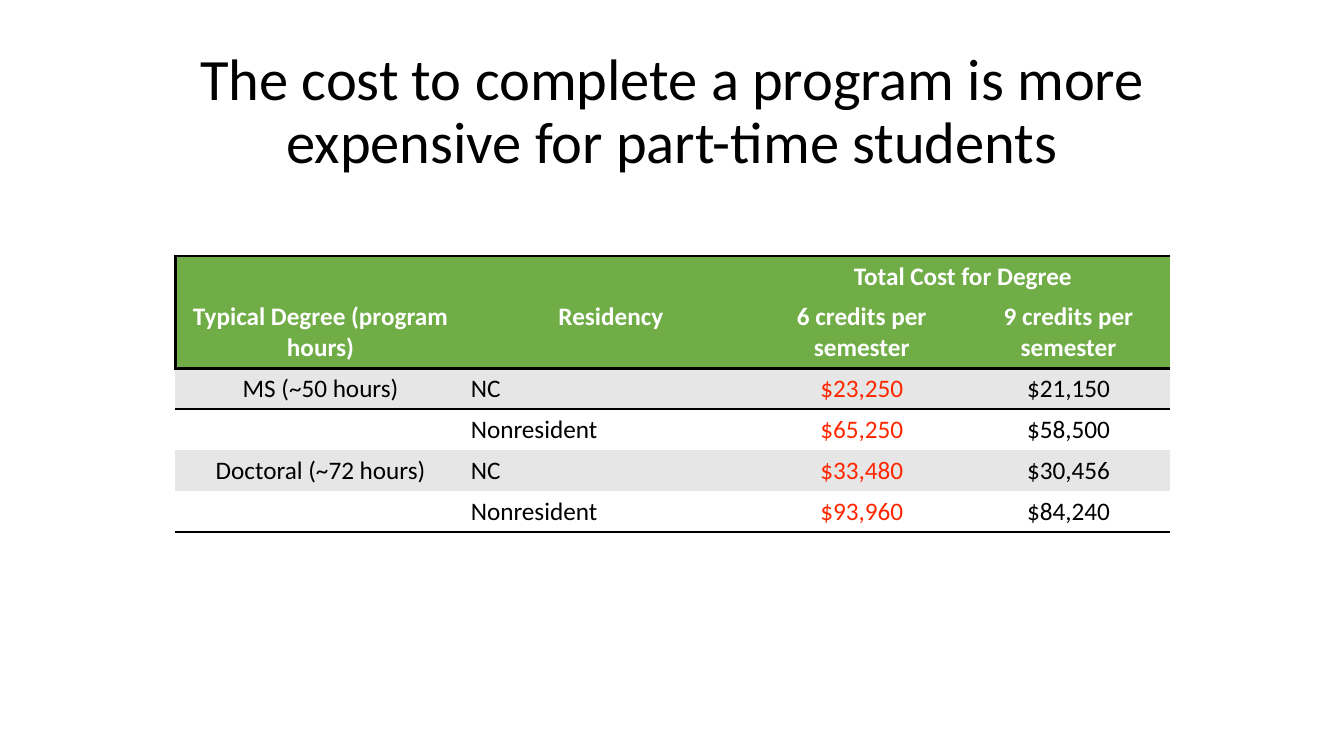
from lxml import etree
from pptx import Presentation
from pptx.dml.color import RGBColor
from pptx.enum.text import MSO_ANCHOR, PP_ALIGN
from pptx.oxml.ns import qn
from pptx.util import Pt

CENTER, LEFT = PP_ALIGN.CENTER, PP_ALIGN.LEFT
MIDDLE = MSO_ANCHOR.MIDDLE
HEX = {"ink": "000000", "head": "70AD47", "band": "E6E6E6",
       "white": "FFFFFF", "red": "FF2600"}
FONT = "Calibri"
INSET = Pt(3.6)
TITLE = "The cost to complete a program is more expensive for part-time students"
COSTS = [
    ["", "", "Total Cost for Degree", ""],
    ["Typical Degree (program hours)", "Residency",
     "6 credits per semester", "9 credits per semester"],
    ["MS (~50 hours)", "NC", "$23,250", "$21,150"],
    ["", "Nonresident", "$65,250", "$58,500"],
    ["Doctoral (~72 hours)", "NC", "$33,480", "$30,456"],
    ["", "Nonresident", "$93,960", "$84,240"],
]
WIDTHS = [207.4, 207.4, 151, 144.4]
HEIGHTS = [29.2, 51.1, 29.2, 29.2, 29.2, 29.2]
RULES = {0: 2, 2: 2, 3: 1.5, 6: 2}
HEADS = 2


def color(name):
    return RGBColor.from_string(HEX[name])


def apply(item, values):
    for name, value in values.items():
        setattr(item, name, value)


def write(para, text, size, ink, bold=False, align=CENTER):
    para.alignment = align
    run = para.add_run()
    run.text = text
    apply(run.font, {"name": FONT, "size": Pt(size), "bold": bold})
    run.font.color.rgb = color(ink)


def add_title(slide):
    box = slide.shapes.add_textbox(Pt(66), Pt(28.8), Pt(828), Pt(104.4))
    frame = box.text_frame
    apply(frame, {"word_wrap": True, "vertical_anchor": MIDDLE,
                  "margin_left": INSET, "margin_right": INSET,
                  "margin_top": INSET, "margin_bottom": INSET})
    para = frame.paragraphs[0]
    para.line_spacing = 0.9
    write(para, TITLE, 41.8, "ink")


def add_edge(cell, side, width):
    edge = etree.SubElement(cell._tc.get_or_add_tcPr(), qn("a:ln" + side))
    if not width:
        etree.SubElement(edge, qn("a:noFill"))
        return
    edge.set("w", str(Pt(width)))
    fill = etree.SubElement(edge, qn("a:solidFill"))
    etree.SubElement(fill, qn("a:srgbClr"), val=HEX["ink"])


def style_cell(cell, row, col, text):
    head = row < HEADS
    apply(cell, {"margin_left": INSET, "margin_right": INSET,
                 "margin_top": INSET, "margin_bottom": INSET})
    edges = {"L": 2 if head and col == 0 else 0, "R": 0,
             "T": RULES.get(row), "B": RULES.get(row + 1)}
    for side, width in edges.items():
        add_edge(cell, side, width)
    cell.fill.solid()
    shade = "head" if head else ("white" if row % 2 else "band")
    cell.fill.fore_color.rgb = color(shade)
    if text:
        ink = "white" if head else ("red" if col == 2 else "ink")
        align = LEFT if col == 1 and not head else CENTER
        write(cell.text_frame.paragraphs[0], text, 18, ink, head, align)


def add_costs(slide):
    shape = slide.shapes.add_table(len(COSTS), len(WIDTHS), Pt(125.3), Pt(182.9),
                                   Pt(sum(WIDTHS)), Pt(sum(HEIGHTS)))
    table = shape.table
    apply(table, {"first_row": False, "horz_banding": False})
    for col, width in enumerate(WIDTHS):
        table.columns[col].width = Pt(width)
    for row, texts in enumerate(COSTS):
        table.rows[row].height = Pt(HEIGHTS[row])
        for col, text in enumerate(texts):
            style_cell(table.cell(row, col), row, col, text)
    table.cell(0, 2).merge(table.cell(0, 3))


def main():
    deck = Presentation()
    apply(deck, {"slide_width": Pt(960), "slide_height": Pt(540)})
    slide = deck.slides.add_slide(deck.slide_layouts[6])
    add_title(slide)
    add_costs(slide)
    deck.save("out.pptx")


if __name__ == "__main__":
    main()
